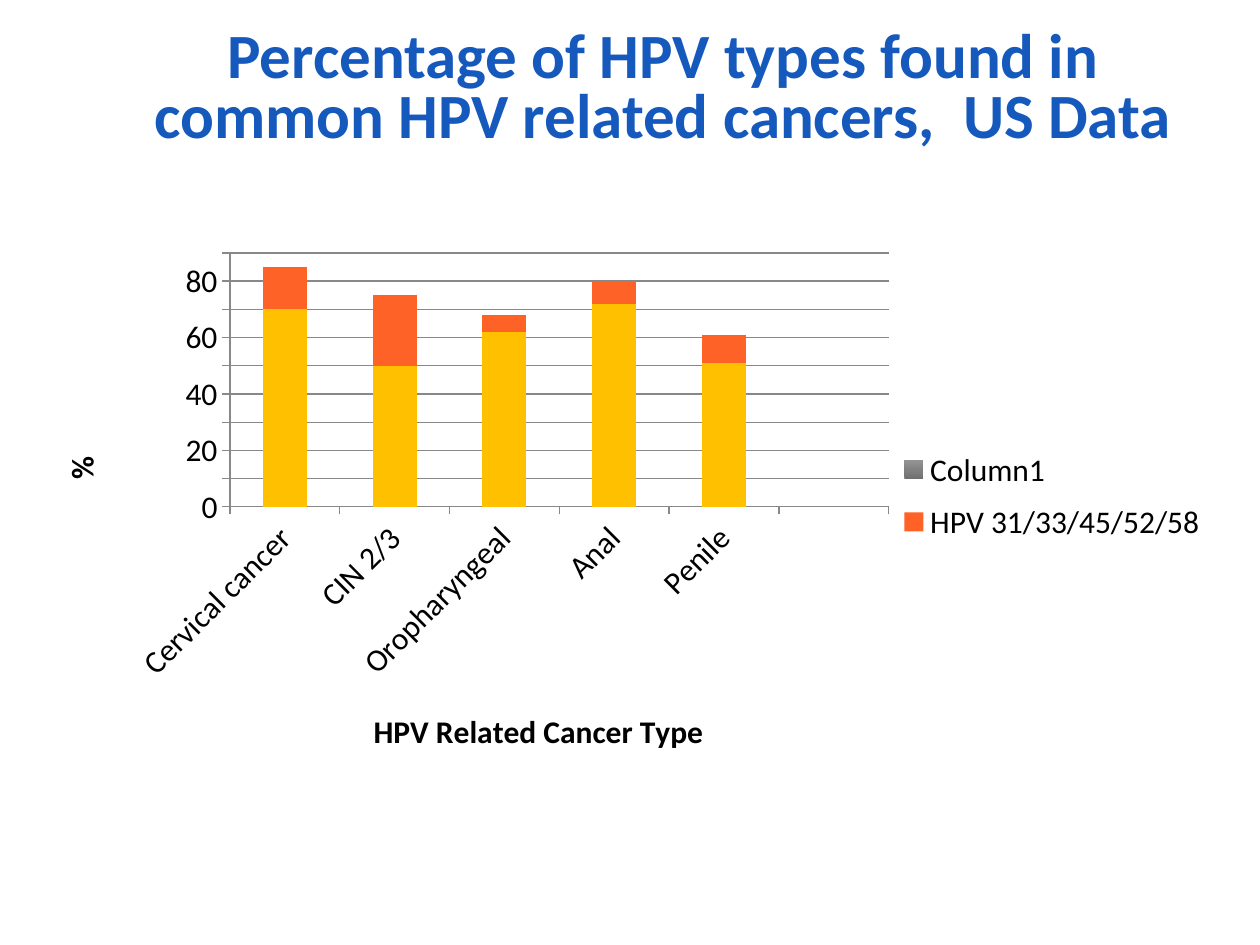
from pptx import Presentation
from pptx.chart.data import CategoryChartData
from pptx.dml.color import RGBColor
from pptx.enum.chart import XL_CHART_TYPE as ChartType, XL_LEGEND_POSITION as LegendPosition
from pptx.enum.chart import XL_TICK_MARK as TickMark
from pptx.enum.text import PP_ALIGN as Align
from pptx.oxml import parse_xml
from pptx.oxml.ns import nsdecls, qn
from pptx.util import Pt

PX = 914400 / 126
FONT = "Calibri"
COLORS = {
    "title": "1559BD", "text": "000000", "axis": "888888",
    "first": "FFC000", "second": "FF6226",
    "gray_dark": "707070", "gray_light": "929292",
}
CANCERS = ["Cervical cancer", "CIN 2/3", "Oropharyngeal", "Anal", "Penile", ""]
HPV_SHARES = {
    "Series 1": [70, 50, 62, 72, 51, None],
    "HPV 31/33/45/52/58": [15, 25, 6, 8, 10, None],
    "Column1": [None] * 6,
}


def px(length):
    """Turn px into EMU."""
    return round(length * PX)


def rgb(key):
    """Look up a colour of the slide."""
    return RGBColor.from_string(COLORS[key])


def style_font(font, size, color, bold=False):
    """Set the face, size, weight and colour of a font."""
    font.name, font.size, font.bold = FONT, Pt(size), bold
    font.color.rgb = rgb(color)


def place_part(part, box, spot, mode=""):
    """Fix a chart part at a px spot relative to the chart box."""
    sizes = box[2:] * 2
    values = [round(length / size, 4) for length, size in zip(spot, sizes)]
    fields = "".join(f'<c:{tag} val="{value}"/>' for tag, value in zip("xywh", values))
    target = f'<c:layoutTarget val="{mode}"/>' if mode else ""
    layout = parse_xml(
        f'<c:layout {nsdecls("c")}><c:manualLayout>{target}'
        f'<c:xMode val="edge"/><c:yMode val="edge"/>{fields}</c:manualLayout></c:layout>'
    )
    for old_layout in part.findall(qn("c:layout")):
        part.remove(old_layout)
    overlay = part.find(qn("c:overlay"))
    if overlay is None:
        part.insert(0, layout)
    else:
        overlay.addprevious(layout)


def style_axis(axis, caption, box, spot, caption_turn, label_turn):
    """Style one axis with its title and turned labels."""
    axis.major_tick_mark, axis.minor_tick_mark = TickMark.OUTSIDE, TickMark.NONE
    axis.format.line.color.rgb = rgb("axis")
    axis.format.line.width = Pt(0.75)
    style_font(axis.tick_labels.font, 18, "text")
    labels = axis._element.find(qn("c:txPr")).find(qn("a:bodyPr"))
    labels.set("rot", str(label_turn * 60000))
    title_frame = axis.axis_title.text_frame
    title_frame.text = caption
    style_font(title_frame.paragraphs[0].font, 18, "text", True)
    title_frame._txBody.find(qn("a:bodyPr")).set("rot", str(caption_turn * 60000))
    place_part(axis.axis_title._element, box, spot)


def add_legend(chart, box):
    """Add the legend without the entry of the first series."""
    chart.has_legend = True
    legend = chart.legend
    legend.position = LegendPosition.RIGHT
    legend.include_in_layout = False
    style_font(legend.font, 18, "text")
    place_part(legend._element, box, (851, 195, 338, 118))
    hidden_entry = parse_xml(
        f'<c:legendEntry {nsdecls("c")}><c:idx val="0"/><c:delete val="1"/></c:legendEntry>'
    )
    legend._element.find(qn("c:legendPos")).addnext(hidden_entry)


def add_hpv_chart(slide, box):
    """Add the stacked columns of HPV types by cancer."""
    data = CategoryChartData()
    data.categories = CANCERS
    for name, shares in HPV_SHARES.items():
        data.add_series(name, shares)
    chart = slide.shapes.add_chart(ChartType.COLUMN_STACKED, *map(px, box), data).chart
    chart.has_title = False
    style_font(chart.font, 18, "text")
    plot = chart.plots[0]
    plot.gap_width, plot.overlap, plot.vary_by_categories = 150, 100, False
    for series, color in zip(plot.series, ("first", "second")):
        series.format.fill.solid()
        series.format.fill.fore_color.rgb = rgb(color)
    gray = plot.series[2].format.fill
    gray.gradient()
    gray.gradient_angle = 90
    for stop, color in zip(gray.gradient_stops, ("gray_dark", "gray_light")):
        stop.color.rgb = rgb(color)

    style_axis(chart.category_axis, "HPV Related Cancer Type", box, (336, 462), 0, -45)
    shares_axis = chart.value_axis
    style_axis(shares_axis, "%", box, (22, 209), -90, 0)
    shares_axis.minimum_scale, shares_axis.maximum_scale = 0, 90
    shares_axis.major_unit = 10
    grid = shares_axis.major_gridlines.format.line
    grid.color.rgb = rgb("axis")
    grid.width = Pt(0.75)
    plot_area = chart._chartSpace.chart.plotArea
    place_part(plot_area, box, (198, 11, 659, 254), "inner")
    add_legend(chart, box)


def add_title(slide, box):
    """Add the centred slide title."""
    frame = slide.shapes.add_textbox(*map(px, box)).text_frame
    frame.word_wrap = True
    frame.margin_left = frame.margin_right = frame.margin_top = frame.margin_bottom = 0
    title = frame.paragraphs[0]
    title.text = "Percentage of HPV types found in common HPV related cancers,  US Data"
    title.alignment = Align.CENTER
    title.line_spacing = Pt(34.2)
    style_font(title.font, 36, "title", True)


def main():
    """Build and save the slide."""
    deck = Presentation()
    deck.slide_width, deck.slide_height = px(1260), px(945)
    slide = deck.slides.add_slide(deck.slide_layouts[6])
    add_hpv_chart(slide, (32, 242, 1207, 528))
    add_title(slide, (119, 31, 1088, 121))
    deck.save("out.pptx")


if __name__ == "__main__":
    main()
